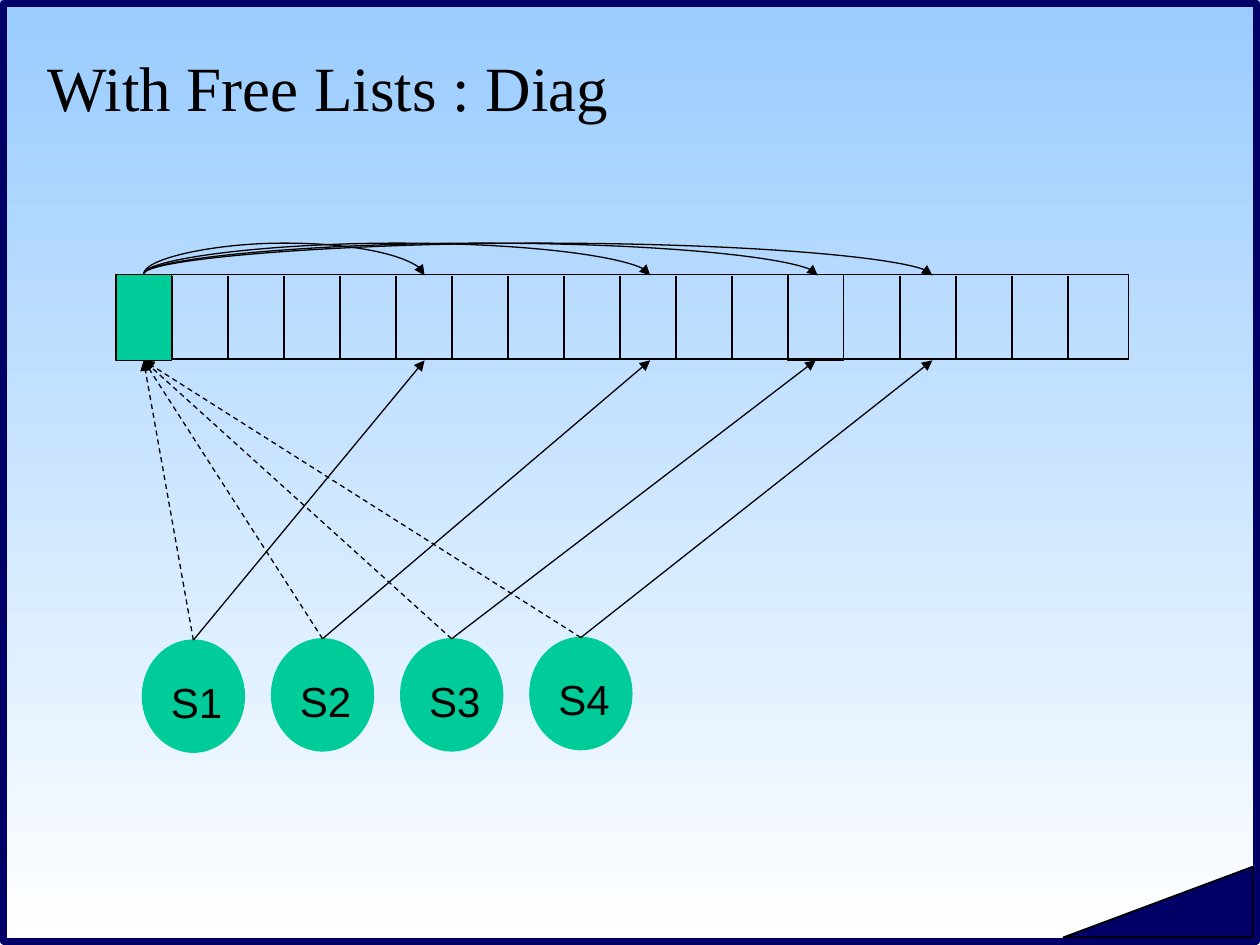
from dataclasses import dataclass

from lxml import etree
from pptx import Presentation
from pptx.dml.color import RGBColor
from pptx.enum.dml import MSO_LINE
from pptx.enum.shapes import MSO_CONNECTOR, MSO_SHAPE
from pptx.enum.text import MSO_ANCHOR, MSO_AUTO_SIZE, PP_ALIGN
from pptx.oxml.ns import qn
from pptx.util import Inches, Pt

RECTANGLE, OVAL, TRIANGLE = MSO_SHAPE.RECTANGLE, MSO_SHAPE.OVAL, MSO_SHAPE.ISOSCELES_TRIANGLE
STRAIGHT, CURVE = MSO_CONNECTOR.STRAIGHT, MSO_CONNECTOR.CURVE
DASH = MSO_LINE.DASH
MIDDLE, TOP = MSO_ANCHOR.MIDDLE, MSO_ANCHOR.TOP
LEFT, CENTER = PP_ALIGN.LEFT, PP_ALIGN.CENTER
FIT_SHAPE, NO_FIT = MSO_AUTO_SIZE.SHAPE_TO_FIT_TEXT, MSO_AUTO_SIZE.NONE
SITE_TOP, SITE_BOTTOM = 0, 2


@dataclass(frozen=True)
class Theme:
    sky: RGBColor = RGBColor(0x99, 0xCC, 0xFF)
    white: RGBColor = RGBColor(0xFF, 0xFF, 0xFF)
    navy: RGBColor = RGBColor(0x00, 0x00, 0x66)
    green: RGBColor = RGBColor(0x00, 0xCC, 0x99)
    black: RGBColor = RGBColor(0x00, 0x00, 0x00)
    title_font: str = "Times New Roman"
    label_font: str = "Arial"
    title_size: float = 36
    label_size: float = 24
    thin: float = 0.75


@dataclass(frozen=True)
class Box:
    left: float
    top: float
    width: float
    height: float


@dataclass(frozen=True)
class Stream:
    name: str
    top: float
    cell_x: float  # middle of the memory cell it points at


THEME = Theme()
STREAMS = [
    Stream("S1", 5.08, 3.37),
    Stream("S2", 5.07, 5.16),
    Stream("S3", 5.07, 6.49),
    Stream("S4", 5.06, 7.4),
]
STREAM_LEFT, STREAM_PITCH = 1.13, 1.025
MEMORY_LEFT, MEMORY_TOP, MEMORY_BOTTOM = 0.92, 2.18, 2.86
CELL_PITCH, CELL_COUNT = 0.4445, 18
OUTLINED_CELL = 12
HEAD_X = 1.14
ARC_RISE, ARC_DEPTH = 0.25, 0.01


def add_box(slide, kind, box: Box, fill=None, line=THEME.black, weight: float = THEME.thin):
    shape = slide.shapes.add_shape(
        kind, Inches(box.left), Inches(box.top), Inches(box.width), Inches(box.height))
    shape.shadow.inherit = False
    if fill is None:
        shape.fill.background()
    else:
        shape.fill.solid()
        shape.fill.fore_color.rgb = fill
    shape.line.color.rgb = line
    shape.line.width = Pt(weight)
    return shape


def add_label(slide, text: str, box: Box, font: str, size: float,
              align=CENTER, anchor=TOP, fit=FIT_SHAPE) -> None:
    frame = slide.shapes.add_textbox(
        Inches(box.left), Inches(box.top), Inches(box.width), Inches(box.height)).text_frame
    frame.text = text
    frame.word_wrap = True
    frame.auto_size = fit
    frame.vertical_anchor = anchor
    paragraph = frame.paragraphs[0]
    paragraph.alignment = align
    run_font = paragraph.runs[0].font
    run_font.name, run_font.size = font, Pt(size)
    run_font.color.rgb = THEME.black


def add_line(slide, x1: float, y1: float, x2: float, y2: float,
             kind=STRAIGHT, arrow: bool = False, dash=None):
    connector = slide.shapes.add_connector(
        kind, Inches(x1), Inches(y1), Inches(x2), Inches(y2))
    connector.line.color.rgb = THEME.black
    connector.line.width = Pt(THEME.thin)
    if dash is not None:
        connector.line.dash_style = dash
    if arrow:
        etree.SubElement(connector.line._get_or_add_ln(), qn("a:tailEnd"), type="triangle")
    etree.SubElement(connector._element.spPr, qn("a:effectLst"))
    return connector


def add_arc(slide, x1: float, x2: float, y: float) -> None:
    """Curved arrow between two points of one height, bulging upwards."""
    middle, span = (x1 + x2) / 2, x2 - x1
    left = middle - ARC_DEPTH / 2
    arc = add_line(slide, left, y + span / 2, left + ARC_DEPTH, y - span / 2,
                   kind=CURVE, arrow=True)
    properties = arc._element.spPr
    properties.find(qn("a:xfrm")).set("rot", str(90 * 60000))
    geometry = properties.find(qn("a:prstGeom"))
    guides = geometry.find(qn("a:avLst"))
    if guides is None:
        guides = etree.SubElement(geometry, qn("a:avLst"))
    bulge = round(-ARC_RISE / ARC_DEPTH * 100000)
    etree.SubElement(guides, qn("a:gd"), name="adj1", fmla=f"val {bulge}")


def add_backdrop(slide) -> None:
    fill = slide.background.fill
    fill.gradient()
    fill.gradient_angle = 270
    for stop, color, position in zip(fill.gradient_stops, (THEME.sky, THEME.white), (0, 1)):
        stop.color.rgb = color
        stop.position = position
    add_box(slide, RECTANGLE, Box(0.03, 0.03, 9.94, 7.44), line=THEME.navy, weight=4)
    corner = add_box(slide, TRIANGLE, Box(8.44, 6.88, 1.5, 0.56), fill=THEME.navy, weight=1)
    corner.adjustments[0] = 1


def add_memory(slide):
    """Draw the row of cells; return the free-list head and the outlined cell."""
    height = MEMORY_BOTTOM - MEMORY_TOP
    add_box(slide, RECTANGLE, Box(0.93, MEMORY_TOP, 8.03, 0.67))
    head = add_box(slide, RECTANGLE, Box(MEMORY_LEFT, MEMORY_TOP, 0.44, height), THEME.green)
    outlined_left = MEMORY_LEFT + OUTLINED_CELL * CELL_PITCH
    outlined = add_box(slide, RECTANGLE, Box(outlined_left, MEMORY_TOP, 0.44, height))
    for index in range(CELL_COUNT):
        if index not in (OUTLINED_CELL, OUTLINED_CELL + 1):
            x = MEMORY_LEFT + index * CELL_PITCH
            add_line(slide, x, MEMORY_TOP + 0.01, x, MEMORY_BOTTOM)
    return head, outlined


def add_stream(slide, index: int, stream: Stream, head, outlined) -> None:
    left = STREAM_LEFT + index * STREAM_PITCH
    circle = add_box(slide, OVAL, Box(left, stream.top, 0.81, 0.89), THEME.green, THEME.green)
    add_label(slide, stream.name, Box(left + 0.05, stream.top + 0.24, 0.76, 0.5),
              THEME.label_font, THEME.label_size)
    x = left + 0.405
    to_head = add_line(slide, x, stream.top, HEAD_X, MEMORY_BOTTOM, arrow=True, dash=DASH)
    to_cell = add_line(slide, x, stream.top, stream.cell_x, MEMORY_BOTTOM, arrow=True)
    for pointer in (to_head, to_cell):
        pointer.begin_connect(circle, SITE_TOP)
    to_head.end_connect(head, SITE_BOTTOM)
    if stream.name == "S3":
        to_cell.end_connect(outlined, SITE_BOTTOM)
    add_arc(slide, HEAD_X, stream.cell_x, MEMORY_TOP)


def main() -> None:
    deck = Presentation()
    deck.slide_width, deck.slide_height = Inches(10), Inches(7.5)
    slide = deck.slides.add_slide(deck.slide_layouts[6])

    # Background, border and title
    add_backdrop(slide)
    add_label(slide, "With Free Lists : Diag", Box(0.28, 0.28, 8.98, 0.81),
              THEME.title_font, THEME.title_size, LEFT, MIDDLE, NO_FIT)

    # Memory row, then the streams with their pointers
    head, outlined = add_memory(slide)
    for index, stream in enumerate(STREAMS):
        add_stream(slide, index, stream, head, outlined)

    deck.save("out.pptx")


if __name__ == "__main__":
    main()
